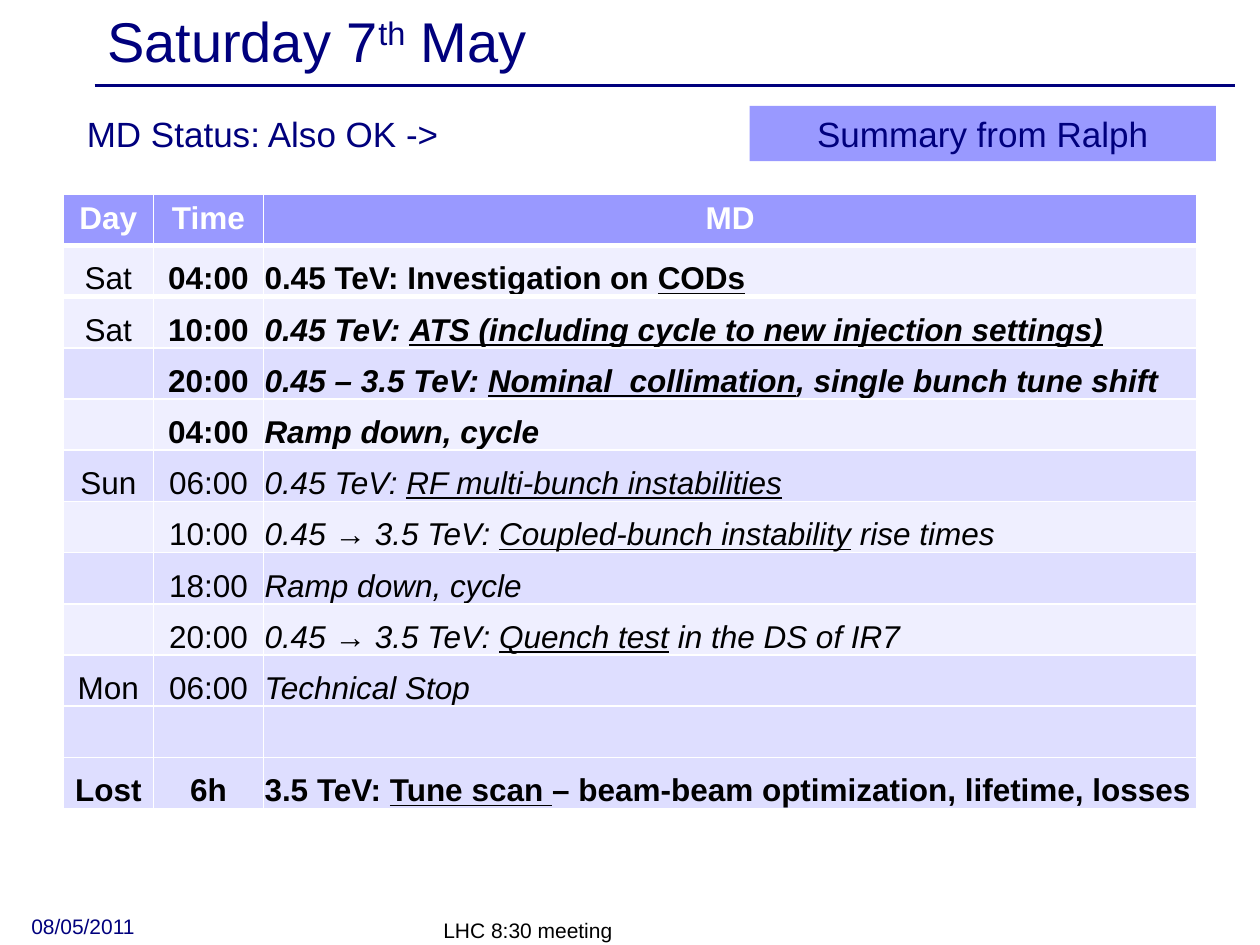
from dataclasses import dataclass

from lxml import etree
from pptx import Presentation
from pptx.dml.color import RGBColor
from pptx.enum.shapes import MSO_CONNECTOR, MSO_SHAPE
from pptx.enum.text import MSO_ANCHOR, PP_ALIGN
from pptx.oxml.ns import qn
from pptx.util import Pt

LEFT, CENTER = PP_ALIGN.LEFT, PP_ALIGN.CENTER
MIDDLE, BOTTOM = MSO_ANCHOR.MIDDLE, MSO_ANCHOR.BOTTOM
STRAIGHT, RECTANGLE = MSO_CONNECTOR.STRAIGHT, MSO_SHAPE.RECTANGLE
TITLE_ONLY = 5


@dataclass(frozen=True)
class Theme:
    font: str = "Arial"
    navy: str = "00007D"
    accent: str = "9999FF"
    light: str = "EFEFFF"
    dark: str = "DEDEFF"
    white: str = "FFFFFF"
    black: str = "000000"
    title_size: int = 32
    status_size: int = 20
    table_size: int = 18
    footer_size: int = 12


THEME = Theme()

HEADINGS = ("Day", "Time", "MD")
# Day, time, activity (underscores enclose underlined words), bold, italic
SCHEDULE = [
    ("Sat", "04:00", "0.45 TeV: Investigation on _CODs_", True, False),
    ("Sat", "10:00", "0.45 TeV: _ATS (including cycle to new injection settings)_", True, True),
    ("", "20:00", "0.45 – 3.5 TeV: _Nominal  collimation_, single bunch tune shift", True, True),
    ("", "04:00", "Ramp down, cycle", True, True),
    ("Sun", "06:00", "0.45 TeV: _RF multi-bunch instabilities_", False, True),
    ("", "10:00", "0.45 → 3.5 TeV: _Coupled-bunch instability_ rise times", False, True),
    ("", "18:00", "Ramp down, cycle", False, True),
    ("", "20:00", "0.45 → 3.5 TeV: _Quench test_ in the DS of IR7", False, True),
    ("Mon", "06:00", "Technical Stop", False, True),
    ("", "", "", False, False),
    ("Lost", "6h", "3.5 TeV: _Tune scan _– beam-beam optimization, lifetime, losses", True, False),
]
LIGHT_ROWS = {1, 2, 4, 6, 8}
COLUMN_WIDTHS = (51.84, 62.64, 533.52)
ROW_HEIGHT = 29.28


def color(value):
    return RGBColor.from_string(value)


def style_span(span, size, ink, bold=False, italic=False):
    span.font.name = THEME.font
    span.font.size = Pt(size)
    span.font.color.rgb = color(ink)
    span.font.bold = bold
    span.font.italic = italic


def place(shape, left, top, width, height):
    shape.left, shape.top = Pt(left), Pt(top)
    shape.width, shape.height = Pt(width), Pt(height)


def write_line(shape, text, size, ink, align=LEFT, anchor=MIDDLE):
    frame = shape.text_frame
    frame.text = text
    frame.word_wrap = True
    frame.vertical_anchor = anchor
    para = frame.paragraphs[0]
    para.alignment = align
    style_span(para.runs[0], size, ink)


def add_label(page, text, bounds, size, ink, anchor=MIDDLE):
    box = page.shapes.add_textbox(*map(Pt, bounds))
    write_line(box, text, size, ink, anchor=anchor)


def add_title(page):
    title = page.shapes.title
    place(title, 54, 2.16, 648, 41.04)
    title.text_frame.vertical_anchor = MIDDLE
    para = title.text_frame.paragraphs[0]
    para.alignment = LEFT
    for text, baseline in (("Saturday 7", 0), ("th", 30000), (" May", 0)):
        span = para.add_run()
        span.text = text
        style_span(span, THEME.title_size, THEME.navy)
        if baseline:
            span._r.get_or_add_rPr().set("baseline", str(baseline))


def add_rule(page):
    rule = page.shapes.add_connector(STRAIGHT, Pt(54), Pt(48.96), Pt(705.6), Pt(48.96))
    rule.line.color.rgb = color(THEME.navy)
    rule.line.width = Pt(2)
    etree.SubElement(rule._element.spPr, qn("a:effectLst"))


def add_banner(page, text, bounds):
    banner = page.shapes.add_shape(RECTANGLE, *map(Pt, bounds))
    banner.shadow.inherit = False
    banner.fill.solid()
    banner.fill.fore_color.rgb = color(THEME.accent)
    banner.line.fill.background()
    write_line(banner, text, THEME.status_size, THEME.navy, CENTER)


def set_borders(cell, top, bottom):
    properties = cell._tc.get_or_add_tcPr()
    for side, width in (("L", 1), ("R", 1), ("T", top), ("B", bottom)):
        line = etree.SubElement(properties, qn(f"a:ln{side}"), w=str(Pt(width)))
        fill = etree.SubElement(line, qn("a:solidFill"))
        etree.SubElement(fill, qn("a:srgbClr"), val=THEME.white)


def fill_cell(cell, row_index):
    # Heavy lines separate the heading and the first entry
    set_borders(cell, 3 if row_index in (1, 2) else 1, 3 if row_index < 2 else 1)
    cell.fill.solid()
    body = THEME.light if row_index in LIGHT_ROWS else THEME.dark
    cell.fill.fore_color.rgb = color(body if row_index else THEME.accent)


def write_cell(cell, text, ink, align, bold, italic=False):
    para = cell.text_frame.paragraphs[0]
    para.alignment = align
    para.font.size = Pt(THEME.table_size)
    for index, part in enumerate(text.split("_")):
        if part:
            span = para.add_run()
            span.text = part
            style_span(span, THEME.table_size, ink, bold, italic)
            span.font.underline = index % 2 == 1


def tighten_cell(cell):
    cell.vertical_anchor = BOTTOM
    cell.margin_left = cell.margin_right = cell.margin_top = Pt(0.72)
    cell.margin_bottom = Pt(0)


def add_schedule(page):
    row_count = len(SCHEDULE) + 1
    frame = page.shapes.add_table(row_count, len(HEADINGS), Pt(36), Pt(111),
                                  Pt(sum(COLUMN_WIDTHS)), Pt(ROW_HEIGHT * row_count))
    table = frame.table
    for column, width in zip(table.columns, COLUMN_WIDTHS):
        column.width = Pt(width)
    for row_index, row in enumerate(table.rows):
        row.height = Pt(ROW_HEIGHT)
        for cell in row.cells:
            fill_cell(cell, row_index)

    for column, heading in enumerate(HEADINGS):
        write_cell(table.cell(0, column), heading, THEME.white, CENTER, True)
    for row_index, (day, time, activity, bold, italic) in enumerate(SCHEDULE, 1):
        entries = (
            (day, CENTER, day == "Lost", False),
            (time, CENTER, bold, False),
            (activity, LEFT, bold, italic),
        )
        for column, (text, align, heavy, slanted) in enumerate(entries):
            cell = table.cell(row_index, column)
            write_cell(cell, text, THEME.black, align, heavy, slanted)
            if text:
                tighten_cell(cell)


def main():
    deck = Presentation()
    deck.slide_width, deck.slide_height = Pt(720), Pt(540)
    page = deck.slides.add_slide(deck.slide_layouts[TITLE_ONLY])

    # Heading
    add_rule(page)
    add_title(page)

    # Footer
    add_label(page, "LHC 8:30 meeting", (246.24, 522, 228.24, 20.16),
              THEME.footer_size, THEME.black, BOTTOM)
    add_label(page, "08/05/2011", (10.8, 519.12, 167.76, 20.88),
              THEME.footer_size, THEME.navy, BOTTOM)

    # Schedule and status
    add_schedule(page)
    add_label(page, "MD Status: Also OK ->", (42.48, 60.48, 601.2, 31.68),
              THEME.status_size, THEME.navy)
    add_banner(page, "Summary from Ralph", (428.4, 60.48, 266.4, 31.68))

    deck.save("out.pptx")


if __name__ == "__main__":
    main()
